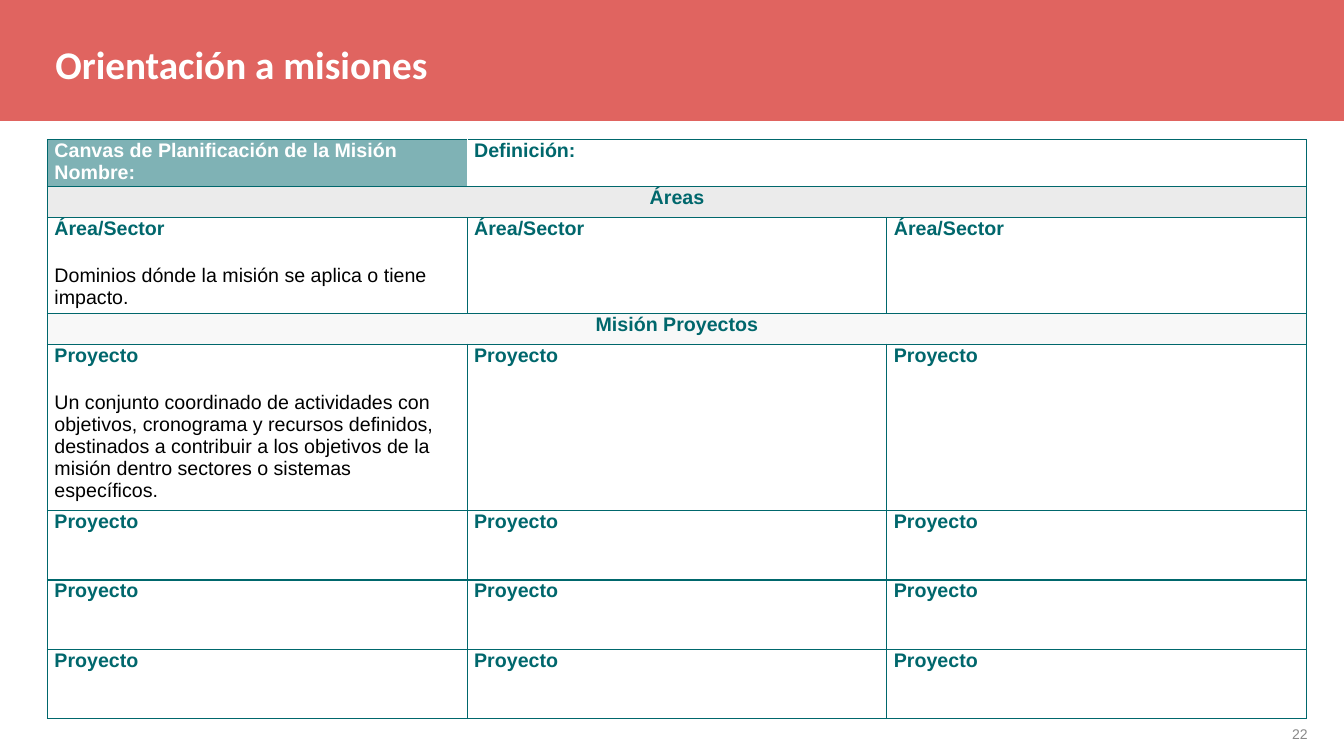
from lxml.etree import SubElement
from pptx import Presentation
from pptx.dml.color import RGBColor
from pptx.enum.shapes import MSO_SHAPE as Shape
from pptx.enum.text import MSO_ANCHOR as Anchor, PP_ALIGN as Align
from pptx.oxml import parse_xml
from pptx.oxml.ns import nsdecls, qn
from pptx.util import Pt

TEAL = RGBColor(0x00, 0x67, 0x6C)
RED = RGBColor(0xD6, 0x2F, 0x29)
WHITE = RGBColor(0xFF, 0xFF, 0xFF)
BLACK = RGBColor(0x00, 0x00, 0x00)
GREY = RGBColor(0x89, 0x89, 0x89)
AREAS_GREY = RGBColor(0xD9, 0xD9, 0xD9)
PROJECTS_GREY = RGBColor(0xF2, 0xF2, 0xF2)


def write(para, text, font="Arial", size=14, color=TEAL, bold=False,
          align=Align.LEFT, before=0, after=0):
    """Fill a paragraph; a newline in the text becomes a line break."""
    para.alignment = align
    para.space_before, para.space_after = Pt(before), Pt(after)
    for number, line in enumerate(text.split("\n")):
        if number:
            para.add_line_break()
        span = para.add_run()
        span.text = line
        span.font.name, span.font.size = font, Pt(size)
        span.font.bold, span.font.color.rgb = bold, color


def paint(fill, color, opacity=100):
    fill.solid()
    fill.fore_color.rgb = color
    if opacity < 100:
        color_node = fill._xPr.find(qn("a:solidFill"))[0]
        SubElement(color_node, qn("a:alpha"), val=str(opacity * 1000))


class MissionSlide:
    def __init__(self, deck):
        self.slide = deck.slides.add_slide(deck.slide_layouts[5])
        self.shapes = self.slide.shapes

    def banner(self, left, top, width, height):
        box = self.shapes.add_shape(Shape.RECTANGLE, Pt(left), Pt(top), Pt(width), Pt(height))
        box.shadow.inherit = False
        paint(box.fill, RED, opacity=74)
        box.line.fill.background()
        # Send behind the title
        self.shapes._spTree.insert(2, box._element)

    def title(self, text, left, top, width, height):
        box = self.shapes.title
        box.left, box.top, box.width, box.height = Pt(left), Pt(top), Pt(width), Pt(height)
        box.text_frame.vertical_anchor = Anchor.MIDDLE
        write(box.text_frame.paragraphs[0], text, font="Calibri", size=28, color=WHITE, bold=True)

    def page_number(self, text, left, top, width, height):
        box = self.shapes.add_textbox(Pt(left), Pt(top), Pt(width), Pt(height))
        box.text_frame.word_wrap = True
        box.text_frame.vertical_anchor = Anchor.MIDDLE
        write(box.text_frame.paragraphs[0], text, size=10, color=GREY, align=Align.RIGHT)

    def table(self, left, top, column_width, row_heights, columns=3):
        frame = self.shapes.add_table(len(row_heights), columns, Pt(left), Pt(top),
                                      Pt(column_width * columns), Pt(sum(row_heights)))
        grid = frame.table
        grid.first_row = grid.horz_banding = False
        for column in grid.columns:
            column.width = Pt(column_width)
        for row, height in zip(grid.rows, row_heights):
            row.height = Pt(height)
            for cell in row.cells:
                cell.margin_left = cell.margin_right = Pt(5)
                cell.margin_top = cell.margin_bottom = 0
                paint(cell.fill, WHITE, opacity=50)
                self.borders(cell)
        return grid

    def borders(self, cell, **colors):
        """Draw all four borders in teal, save those given by side (L, R, T, B)."""
        properties = cell._tc.get_or_add_tcPr()
        for place, side in enumerate("LRTB"):
            old = properties.find(qn(f"a:ln{side}"))
            if old is not None:
                properties.remove(old)
            properties.insert(place, parse_xml(
                f'<a:ln{side} {nsdecls("a")} w="12700"><a:solidFill>'
                f'<a:srgbClr val="{colors.get(side, TEAL)}"/></a:solidFill></a:ln{side}>'))

    def cell_text(self, cell, heading, body="", color=TEAL, align=Align.LEFT):
        frame = cell.text_frame
        write(frame.paragraphs[0], heading, color=color, bold=True, align=align, after=12)
        if body:
            write(frame.add_paragraph(), body, color=BLACK, before=6, after=12)

    def band(self, grid, row, text, color):
        cell = grid.cell(row, 0)
        cell.merge(grid.cell(row, 2))
        paint(cell.fill, color)
        self.cell_text(cell, text, align=Align.CENTER)


def main():
    deck = Presentation()
    deck.slide_width, deck.slide_height = Pt(960), Pt(540)
    page = MissionSlide(deck)

    # Banner, title and page number
    page.banner(0, -0.7, 960, 87)
    page.title("Orientación a misiones", 32.4, 23, 687.6, 45.4)
    page.page_number("22", 880.6, 514, 60.5, 21)

    # Canvas header
    grid = page.table(33.9, 99.8, 299.8, [31.4, 22, 65.2, 22, 112.2, 49.5, 49.5, 49.5])
    name, definition = grid.cell(0, 0), grid.cell(0, 1)
    definition.merge(grid.cell(0, 2))
    paint(name.fill, TEAL)
    page.borders(name, R=WHITE)
    page.borders(definition, L=WHITE)
    page.cell_text(name, "Canvas de Planificación de la Misión \nNombre:", color=WHITE)
    page.cell_text(definition, "Definición:")

    # Section bands
    page.band(grid, 1, "Áreas", AREAS_GREY)
    page.band(grid, 3, "Misión Proyectos", PROJECTS_GREY)

    # Areas and projects, with an explanation in the first cell of each section
    explanations = {
        2: "Dominios dónde la misión se aplica o tiene impacto.",
        4: "Un conjunto coordinado de actividades con objetivos, cronograma y recursos "
           "definidos, destinados a contribuir a los objetivos de la misión dentro "
           "sectores o sistemas específicos.",
    }
    for row in (2, 4, 5, 6, 7):
        heading = "Área/Sector" if row == 2 else "Proyecto"
        for column in range(3):
            body = explanations.get(row, "") if column == 0 else ""
            page.cell_text(grid.cell(row, column), heading, body)

    deck.save("out.pptx")


if __name__ == "__main__":
    main()
